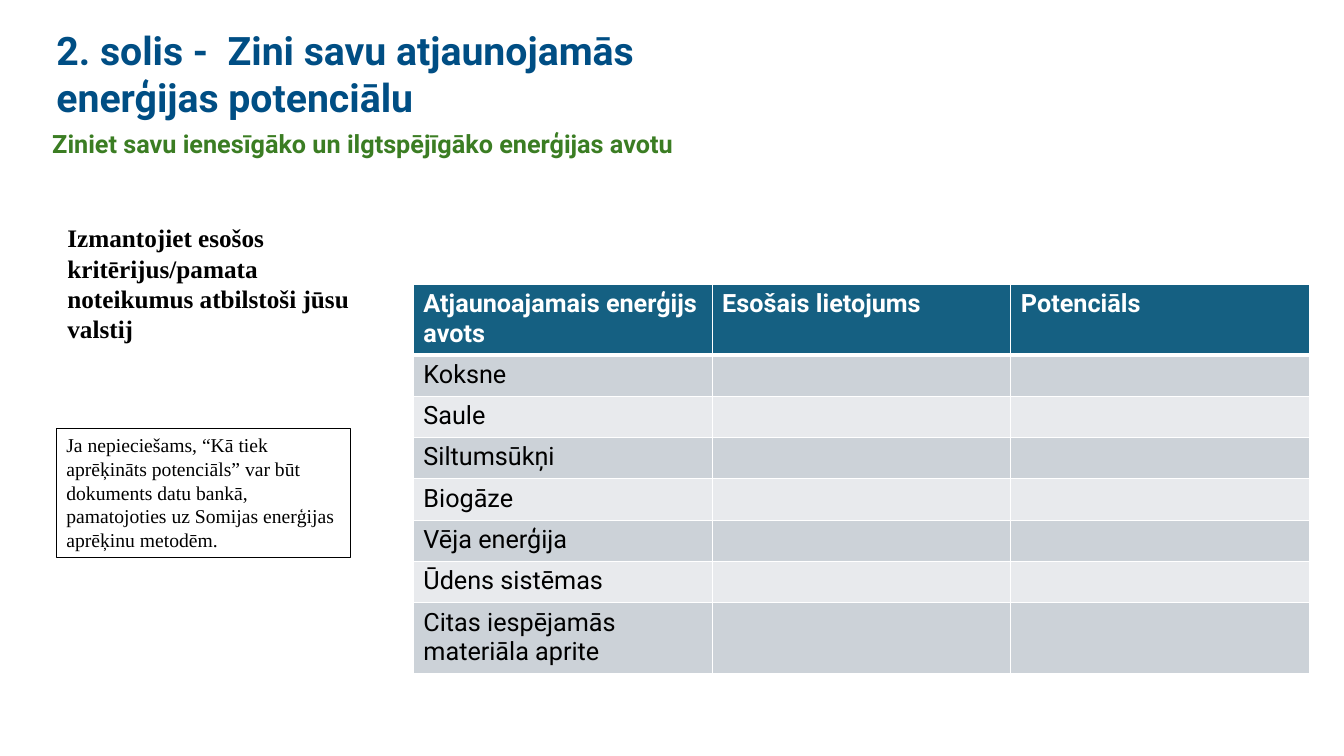
from lxml import etree
from pptx import Presentation
from pptx.dml.color import RGBColor
from pptx.enum import shapes, text
from pptx.oxml import ns
from pptx.util import Inches, Pt

# Content
TITLE = "2. solis -  Zini savu atjaunojamās enerģijas potenciālu"
SUBTITLE = "Ziniet savu ienesīgāko un ilgtspējīgāko enerģijas avotu"
INSTRUCTION = "Izmantojiet esošos kritērijus/pamata noteikumus atbilstoši jūsu valstij"
NOTE = ("Ja nepieciešams, “Kā tiek aprēķināts potenciāls” var būt dokuments datu bankā, "
        "pamatojoties uz Somijas enerģijas aprēķinu metodēm.")
HEADERS = ["Atjaunoajamais enerģijs avots", "Esošais lietojums", "Potenciāls"]
SOURCES = ["Koksne", "Saule", "Siltumsūkņi", "Biogāze", "Vēja enerģija",
           "Ūdens sistēmas", "Citas iespējamās materiāla aprite"]

THEME = {
    "sans": "Roboto", "serif": "Times New Roman",
    "title": 28, "body": 18, "note": 14,
    "blue": "004E84", "green": "3B7D23", "black": "000000", "white": "FFFFFF",
    "header": "156082", "bands": ["CCD2D8", "E8EAED"],
    "rule": 1, "header_rule": 3,
}

# Table geometry
TABLE_LEFT, TABLE_TOP, TABLE_WIDTH = 4.1, 2.82, 8.89
ROW_HEIGHT, TALL_ROW_HEIGHT = 0.41, 0.68


def write(frame, words, font="sans", size="body", color="black", bold=False, after=0):
    frame.word_wrap = True
    paragraph = frame.paragraphs[0]
    paragraph.alignment = text.PP_ALIGN.LEFT
    paragraph.space_after = Pt(after)
    run = paragraph.add_run()
    run.text = words
    run.font.name = THEME[font]
    run.font.size = Pt(THEME[size])
    run.font.bold = bold
    run.font.color.rgb = RGBColor.from_string(THEME[color])


def add_text(slide, box, words, **style):
    shape = slide.shapes.add_textbox(*map(Inches, box))
    write(shape.text_frame, words, **style)
    return shape


def set_borders(cell, top, bottom):
    properties = cell._tc.get_or_add_tcPr()
    widths = {"lnL": THEME["rule"], "lnR": THEME["rule"], "lnT": top, "lnB": bottom}
    for index, (side, width) in enumerate(widths.items()):
        line = etree.Element(ns.qn(f"a:{side}"), w=str(Pt(width)))
        fill = etree.SubElement(line, ns.qn("a:solidFill"))
        etree.SubElement(fill, ns.qn("a:srgbClr"), val=THEME["white"])
        properties.insert(index, line)


def add_energy_table(slide):
    rows = [HEADERS] + [[source, "", ""] for source in SOURCES]
    heights = [TALL_ROW_HEIGHT] + [ROW_HEIGHT] * (len(rows) - 2) + [TALL_ROW_HEIGHT]
    frame = slide.shapes.add_table(len(rows), len(HEADERS), Inches(TABLE_LEFT), Inches(TABLE_TOP),
                                   Inches(TABLE_WIDTH), Inches(sum(heights)))
    table = frame.table
    for column in table.columns:
        column.width = Inches(TABLE_WIDTH / len(HEADERS))
    for r, row in enumerate(rows):
        table.rows[r].height = Inches(heights[r])
        is_header = r == 0
        fill = THEME["header"] if is_header else THEME["bands"][(r - 1) % 2]
        top = THEME["header_rule"] if r == 1 else THEME["rule"]
        bottom = THEME["header_rule"] if is_header else THEME["rule"]
        for c, words in enumerate(row):
            cell = table.cell(r, c)
            cell.fill.solid()
            cell.fill.fore_color.rgb = RGBColor.from_string(fill)
            set_borders(cell, top, bottom)
            if words:
                write(cell.text_frame, words, bold=is_header,
                      color="white" if is_header else "black")


def main():
    presentation = Presentation()
    presentation.slide_width, presentation.slide_height = Inches(13.33), Inches(7.5)
    slide = presentation.slides.add_slide(presentation.slide_layouts[6])

    # Title, without inner margins
    title = add_text(slide, (0.56, 0.26, 6.67, 0.94), TITLE,
                     size="title", color="blue", bold=True).text_frame
    title.margin_left = title.margin_top = title.margin_right = title.margin_bottom = 0
    title.vertical_anchor = text.MSO_ANCHOR.MIDDLE

    # Instruction and outlined note
    add_text(slide, (0.57, 2.16, 3.32, 1.31), INSTRUCTION, font="serif", bold=True, after=6)
    note = slide.shapes.add_shape(shapes.MSO_SHAPE.RECTANGLE,
                                  *map(Inches, (0.56, 4.25, 2.92, 1.28)))
    note.shadow.inherit = False
    note.fill.background()
    note.line.color.rgb = RGBColor.from_string(THEME["black"])
    note.line.width = Pt(0.75)
    note.text_frame.vertical_anchor = text.MSO_ANCHOR.TOP
    write(note.text_frame, NOTE, font="serif", size="note", after=6)

    # Subtitle and table
    add_text(slide, (0.42, 1.22, 9.86, 0.4), SUBTITLE, color="green", bold=True)
    add_energy_table(slide)

    presentation.save("out.pptx")


if __name__ == "__main__":
    main()
